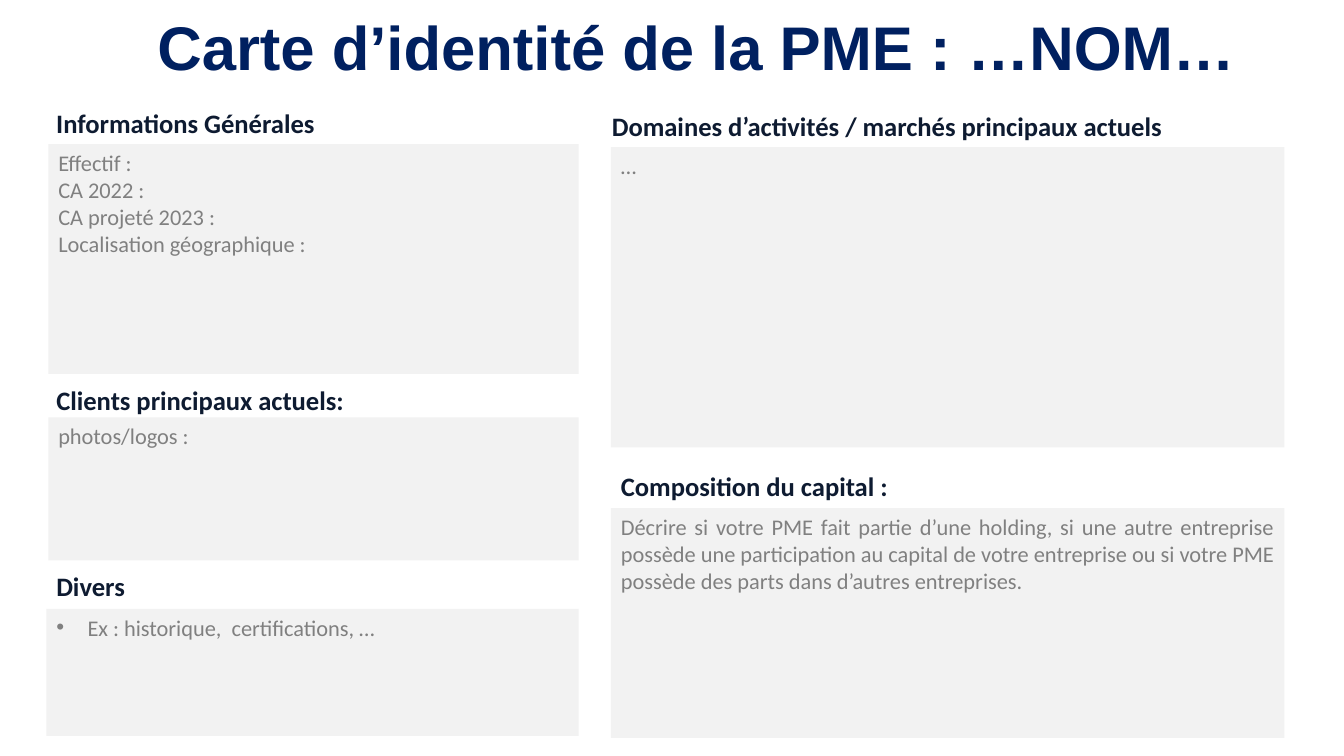
import lxml.etree
import pptx
import pptx.dml.color
import pptx.enum.shapes
import pptx.enum.text
import pptx.oxml.ns
import pptx.util

PX = 9144
ALIGN = pptx.enum.text.PP_ALIGN
ANCHOR = pptx.enum.text.MSO_ANCHOR
AUTO_SIZE = pptx.enum.text.MSO_AUTO_SIZE

TITLE_FONT = {"name": "Arial", "size": pptx.util.Pt(44), "bold": True}
HEADING_FONT = {"name": "Calibri", "size": pptx.util.Pt(19), "bold": True}
BODY_FONT = {"name": "Calibri", "size": pptx.util.Pt(16), "bold": False}

HEADINGS = [
    ("Informations Générales", (46, 101, 586, 42), True),
    ("Clients principaux actuels:", (46, 376, 369, 42), True),
    ("Divers", (46, 561, 201, 43), True),
    ("Domaines d’activités / marchés principaux actuels", (597, 104, 677, 42), True),
    ("Composition du capital :", (606, 461, 332, 42), False),
]

PANELS = [
    (["Effectif :", "CA 2022 :", "CA projeté 2023 :", "Localisation géographique :"],
     (48, 143, 526, 228), ALIGN.JUSTIFY, False),
    (["photos/logos :"], (48, 414, 526, 142), ALIGN.LEFT, False),
    (["Ex : historique,  certifications, …"], (46, 604, 528, 126), ALIGN.JUSTIFY, True),
    (["…"], (606, 146, 668, 298), ALIGN.JUSTIFY, False),
    (["Décrire si votre PME fait partie d’une holding, si une autre entreprise possède "
      "une participation au capital de votre entreprise ou si votre PME possède des "
      "parts dans d’autres entreprises."],
     (606, 504, 668, 228), ALIGN.JUSTIFY, False),
]


def color(value):
    """Turn a hex string into a colour."""
    return pptx.dml.color.RGBColor.from_string(value)


def emu(box):
    """Turn pixel lengths into EMU."""
    return [pptx.util.Emu(length * PX) for length in box]


def set_attributes(target, values):
    """Set each attribute of the target from a dict."""
    for name, value in values.items():
        setattr(target, name, value)


def add_bullet(paragraph):
    """Give the paragraph a round bullet with a hanging indent."""
    properties = paragraph._p.get_or_add_pPr()
    properties.set("marL", str(31 * PX))
    properties.set("indent", str(-31 * PX))
    for tag, key, value in (("a:buFont", "typeface", "Arial"), ("a:buChar", "char", "•")):
        element = lxml.etree.SubElement(properties, pptx.oxml.ns.qn(tag))
        element.set(key, value)


def write_text(frame, lines, font, font_color, align, wrap=True, bullet=False):
    """Fill a text frame with one formatted paragraph per line."""
    set_attributes(frame, {"word_wrap": wrap, "vertical_anchor": ANCHOR.TOP})
    for index, line in enumerate(lines):
        paragraph = frame.add_paragraph() if index else frame.paragraphs[0]
        paragraph.alignment = align
        if bullet:
            add_bullet(paragraph)
        run = paragraph.add_run()
        run.text = line
        set_attributes(run.font, font)
        run.font.color.rgb = color(font_color)


def add_title(slide, text, box):
    """Place and format the title placeholder."""
    title = slide.shapes.title
    set_attributes(title, dict(zip(("left", "top", "width", "height"), emu(box))))
    title.text_frame.auto_size = AUTO_SIZE.NONE
    write_text(title.text_frame, [text], TITLE_FONT, "002060", ALIGN.LEFT)
    title.text_frame.paragraphs[0].line_spacing = 0.9


def add_heading(slide, text, box, wrap):
    """Add a section heading."""
    frame = slide.shapes.add_textbox(*emu(box)).text_frame
    write_text(frame, [text], HEADING_FONT, "0E1B31", ALIGN.LEFT, wrap)
    frame.auto_size = AUTO_SIZE.SHAPE_TO_FIT_TEXT


def add_panel(slide, lines, box, align, bullet):
    """Add a grey panel with its text."""
    shape = slide.shapes.add_shape(pptx.enum.shapes.MSO_SHAPE.RECTANGLE, *emu(box))
    shape.shadow.inherit = False
    shape.fill.solid()
    shape.fill.fore_color.rgb = color("F2F2F2")
    shape.line.fill.background()
    write_text(shape.text_frame, lines, BODY_FONT, "808080", align, bullet=bullet)


def main():
    """Build the company identity slide."""
    presentation = pptx.Presentation()
    presentation.slide_width, presentation.slide_height = emu((1333, 750))
    slide = presentation.slides.add_slide(presentation.slide_layouts[5])
    add_title(slide, "Carte d’identité de la PME : …NOM…", (146, 12, 1111, 123))
    for panel in PANELS:
        add_panel(slide, *panel)
    for heading in HEADINGS:
        add_heading(slide, *heading)
    presentation.save("out.pptx")


if __name__ == "__main__":
    main()
